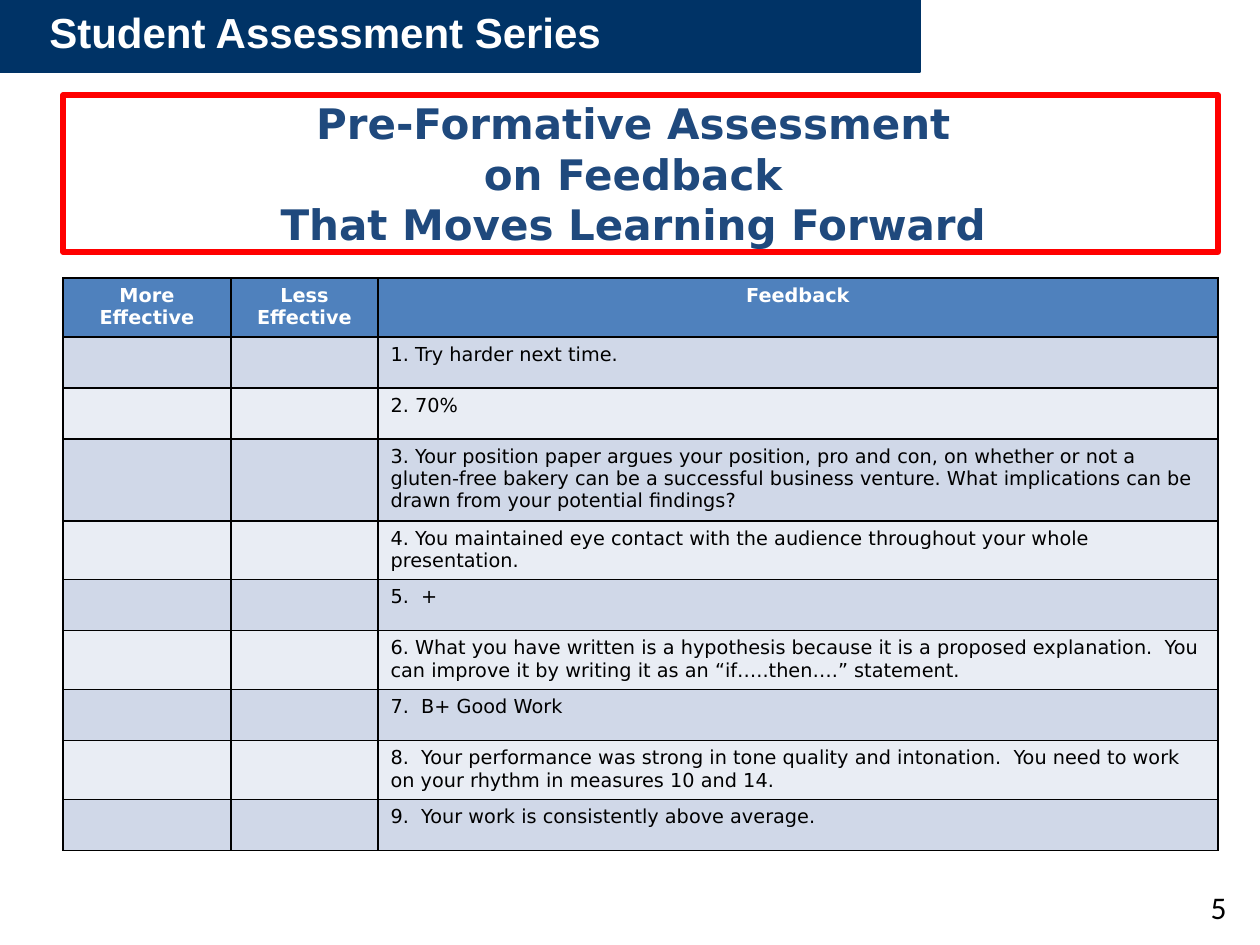
"""Build the feedback pre-assessment slide with its banner, title and rating table."""
from lxml import etree
from pptx import Presentation
from pptx import util as u
from pptx.dml.color import RGBColor
from pptx.enum import shapes, text
from pptx.oxml.ns import qn

BANNER = "Student Assessment Series"
TITLE = ["Pre-Formative Assessment ", "on Feedback ", "That Moves Learning Forward "]
PAGE_NUMBER = "5"
HEADINGS = ["More Effective", "Less Effective", "Feedback"]
FEEDBACK = [
    "1. Try harder next time.",
    "2. 70%",
    "3. Your position paper argues your position, pro and con, on whether or not a "
    "gluten-free bakery can be a successful business venture. What implications can be "
    "drawn from your potential findings?",
    "4. You maintained eye contact with the audience throughout your whole presentation.",
    "5.  +",
    "6. What you have written is a hypothesis because it is a proposed explanation.  "
    "You can improve it by writing it as an “if…..then….” statement.",
    "7.  B+ Good Work",
    "8.  Your performance was strong in tone quality and intonation.  "
    "You need to work on your rhythm in measures 10 and 14.",
    "9.  Your work is consistently above average.",
]
COLUMN_WIDTHS = [168, 147, 840]
ROW_HEIGHT = 51
LEFT = 63
HEADING_FILL = "4F81BD"
BAND_FILLS = ["D0D8E8", "E9EDF4"]
BODY_FONT = "DejaVu Sans"


def px(length):
    return round(length * 914400 / 126)


def color(value):
    return RGBColor.from_string(value)


def add_run(paragraph, words, size, font, hex_color, bold=False):
    run = paragraph.add_run()
    run.text = words
    run.font.size = u.Pt(size)
    run.font.name = font
    run.font.bold = bold
    run.font.color.rgb = color(hex_color)


def add_rectangle(slide, box, line, width, fill=None):
    shape = slide.shapes.add_shape(shapes.MSO_SHAPE.RECTANGLE, *map(px, box))
    shape.shadow.inherit = False
    if fill:
        shape.fill.solid()
        shape.fill.fore_color.rgb = color(fill)
    else:
        shape.fill.background()
    shape.line.color.rgb = color(line)
    shape.line.width = u.Pt(width)
    return shape


def add_borders(cell):
    properties = cell._tc.get_or_add_tcPr()
    for index, side in enumerate(("lnL", "lnR", "lnT", "lnB")):
        line = etree.Element(qn(f"a:{side}"), w=str(u.Pt(1)))
        fill = etree.SubElement(line, qn("a:solidFill"))
        etree.SubElement(fill, qn("a:srgbClr"), val="000000")
        properties.insert(index, line)


def add_banner(slide):
    add_rectangle(slide, (0, -1, 920, 73), "003366", 0.75, "003366")
    frame = slide.shapes.add_textbox(*map(px, (37, 0, 595, 64))).text_frame
    frame.word_wrap = False
    add_run(frame.paragraphs[0], BANNER, 24, "Arial", "FFFFFF", True)


def add_title(slide):
    frame = add_rectangle(slide, (LEFT, 95, sum(COLUMN_WIDTHS), 157), "FF0000", 3).text_frame
    frame.word_wrap = True
    frame.vertical_anchor = text.MSO_ANCHOR.MIDDLE
    paragraph = frame.paragraphs[0]
    paragraph.alignment = text.PP_ALIGN.CENTER
    for index, words in enumerate(TITLE):
        if index:
            paragraph.add_line_break()
        add_run(paragraph, words, 24, BODY_FONT, "1F497D", True)


def add_feedback_table(slide):
    rows = [HEADINGS] + [["", "", comment] for comment in FEEDBACK]
    box = (LEFT, 278, sum(COLUMN_WIDTHS), ROW_HEIGHT * len(rows))
    table = slide.shapes.add_table(len(rows), len(HEADINGS), *map(px, box)).table
    for column, width in zip(table.columns, COLUMN_WIDTHS):
        column.width = px(width)
    for row_index, row in enumerate(rows):
        table.rows[row_index].height = px(ROW_HEIGHT)
        heading = row_index == 0
        for column_index, words in enumerate(row):
            cell = table.cell(row_index, column_index)
            cell.fill.solid()
            cell.fill.fore_color.rgb = color(
                HEADING_FILL if heading else BAND_FILLS[(row_index - 1) % 2])
            add_borders(cell)
            paragraph = cell.text_frame.paragraphs[0]
            if heading:
                paragraph.alignment = text.PP_ALIGN.CENTER
            if words:
                add_run(paragraph, words, 11, BODY_FONT, "FFFFFF" if heading else "000000", heading)


def add_page_number(slide):
    frame = slide.shapes.add_textbox(*map(px, (945, 882, 294, 50))).text_frame
    frame.word_wrap = True
    frame.vertical_anchor = text.MSO_ANCHOR.MIDDLE
    paragraph = frame.paragraphs[0]
    paragraph.alignment = text.PP_ALIGN.RIGHT
    add_run(paragraph, PAGE_NUMBER, 18, "Calibri", "000000")


def main():
    presentation = Presentation()
    presentation.slide_width, presentation.slide_height = px(1260), px(945)
    slide = presentation.slides.add_slide(presentation.slide_layouts[6])
    add_banner(slide)
    add_title(slide)
    add_page_number(slide)
    add_feedback_table(slide)
    presentation.save("out.pptx")


if __name__ == "__main__":
    main()
